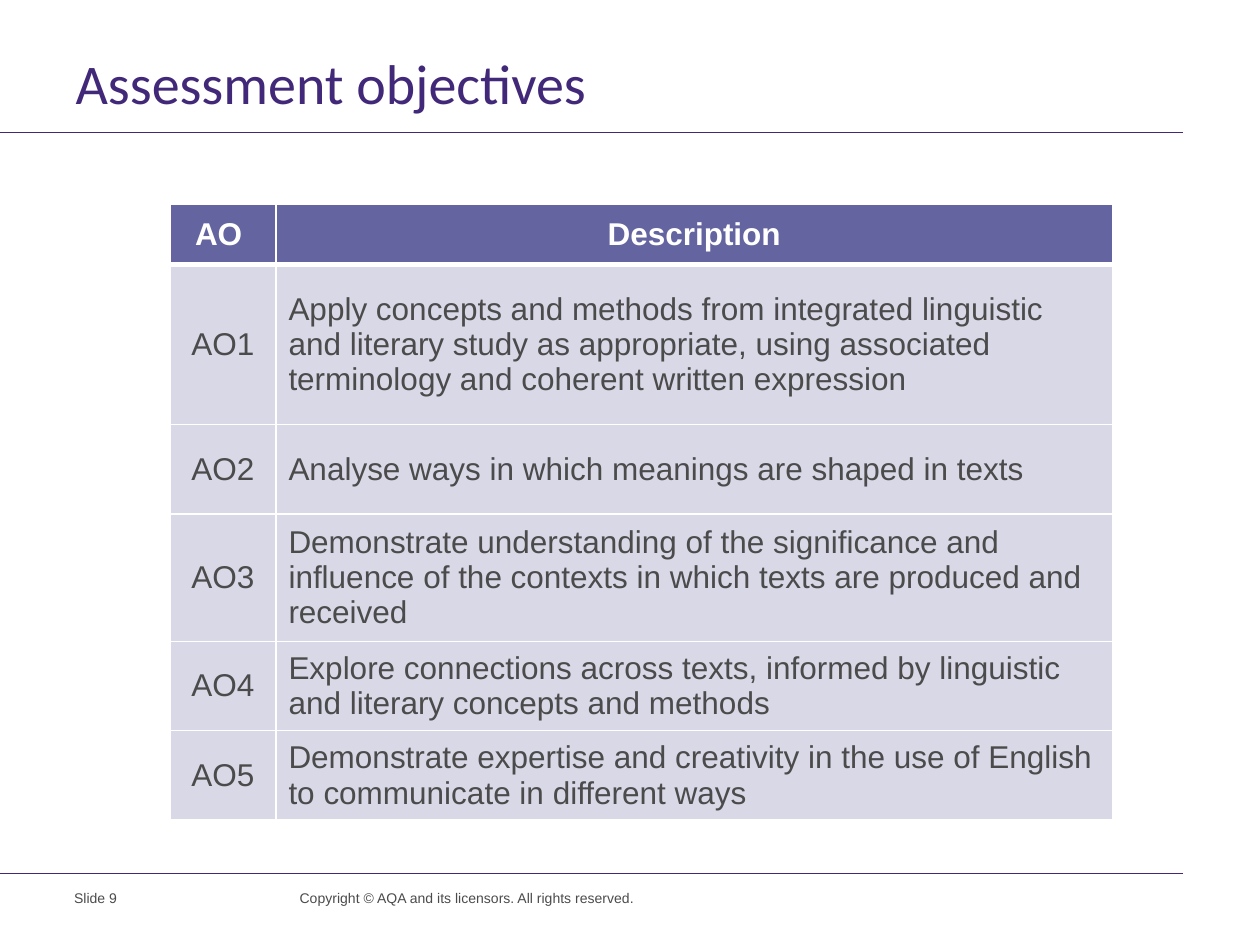
from lxml import etree
from pptx import Presentation
from pptx.dml.color import RGBColor
from pptx.enum.shapes import MSO_CONNECTOR
from pptx.enum.text import MSO_ANCHOR, MSO_AUTO_SIZE, PP_ALIGN
from pptx.oxml.ns import qn
from pptx.util import Inches, Pt

STRAIGHT = MSO_CONNECTOR.STRAIGHT
MIDDLE, BOTTOM = MSO_ANCHOR.MIDDLE, MSO_ANCHOR.BOTTOM
LEFT, CENTER = PP_ALIGN.LEFT, PP_ALIGN.CENTER
NO_AUTOFIT = MSO_AUTO_SIZE.NONE

PURPLE, LILAC, GREY, WHITE = "412878", "6464A0", "4B4B4B", "FFFFFF"
TITLE_ONLY = 5
RULE_END = 9.39

OBJECTIVES = [
    ("AO ", "Description"),
    ("AO1", "Apply concepts and methods from integrated linguistic and literary study "
            "as appropriate, using associated terminology and coherent written expression"),
    ("AO2", "Analyse ways in which meanings are shaped in texts"),
    ("AO3", "Demonstrate understanding of the significance and influence of the contexts "
            "in which texts are produced and received"),
    ("AO4", "Explore connections across texts, informed by linguistic and literary "
            "concepts and methods"),
    ("AO5", "Demonstrate expertise and creativity in the use of English to communicate "
            "in different ways"),
]
COLUMN_WIDTHS = [0.84, 6.64]
ROW_HEIGHTS = [0.48, 1.27, 0.71, 1.01, 0.71, 0.71]


def color(value):
    return RGBColor.from_string(value)


def add_span(para, text, size, font, ink, bold=False):
    span = para.add_run()
    span.text = text
    span.font.size = Pt(size)
    span.font.name = font
    span.font.bold = bold
    span.font.color.rgb = color(ink)


def add_rule(page, top):
    rule = page.shapes.add_connector(
        STRAIGHT, Inches(0), Inches(top), Inches(RULE_END), Inches(top))
    rule.line.color.rgb = color(PURPLE)
    rule.line.width = Pt(0.6)
    etree.SubElement(rule._element.spPr, qn("a:effectLst"))


def add_title(page, left, top, width, height):
    title = page.shapes.title
    title.left, title.top = Inches(left), Inches(top)
    title.width, title.height = Inches(width), Inches(height)
    frame = title.text_frame
    frame.auto_size = NO_AUTOFIT
    frame.vertical_anchor = BOTTOM
    frame.margin_top = frame.margin_bottom = 0
    para = frame.paragraphs[0]
    para.alignment = LEFT
    para.line_spacing = Pt(28)
    add_span(para, "Assessment objectives", 32, "Calibri", PURPLE)


def add_footer_text(page, text, left, top, width, height):
    box = page.shapes.add_textbox(Inches(left), Inches(top), Inches(width), Inches(height))
    box.text_frame.word_wrap = True
    add_span(box.text_frame.paragraphs[0], text, 8, "Arial", GREY)


def set_borders(cell, top_width, bottom_width):
    properties = cell._tc.get_or_add_tcPr()
    widths = {"a:lnL": 1, "a:lnR": 1, "a:lnT": top_width, "a:lnB": bottom_width}
    for tag, width in widths.items():
        line = etree.SubElement(properties, qn(tag), w=str(Pt(width)))
        fill = etree.SubElement(line, qn("a:solidFill"))
        etree.SubElement(fill, qn("a:srgbClr"), val=WHITE)


def set_fill(cell, percent):
    cell.fill.solid()
    cell.fill.fore_color.rgb = color(LILAC)
    if percent < 100:
        shade = cell._tc.tcPr.find(qn("a:solidFill")).find(qn("a:srgbClr"))
        etree.SubElement(shade, qn("a:alpha"), val=str(percent * 1000))


def add_objectives(page, left, top, width, height):
    table = page.shapes.add_table(
        len(ROW_HEIGHTS), len(COLUMN_WIDTHS),
        Inches(left), Inches(top), Inches(width), Inches(height)).table
    table.horz_banding = False
    for column, column_width in zip(table.columns, COLUMN_WIDTHS):
        column.width = Inches(column_width)
    for row, row_height in zip(table.rows, ROW_HEIGHTS):
        row.height = Inches(row_height)
    for r, texts in enumerate(OBJECTIVES):
        header = r == 0
        for c, text in enumerate(texts):
            cell = table.cell(r, c)
            set_borders(cell, 3 if r == 1 else 1, 3 if header else 1)
            set_fill(cell, 100 if header else 25)
            cell.vertical_anchor = MIDDLE
            para = cell.text_frame.paragraphs[0]
            para.alignment = CENTER if header or c == 0 else LEFT
            add_span(para, text, 18, "Arial", WHITE if header else GREY, header)


def main():
    deck = Presentation()
    deck.slide_width, deck.slide_height = Inches(10), Inches(7.5)
    page = deck.slides.add_slide(deck.slide_layouts[TITLE_ONLY])
    for top in (1.05, 6.93):
        add_rule(page, top)
    add_title(page, 0.5, 0.44, 9.5, 0.48)
    add_footer_text(page, "Slide 9", 0.49, 7.01, 1.56, 0.38)
    add_footer_text(page, "Copyright © AQA and its licensors. All rights reserved.",
                    2.28, 7.01, 2.93, 0.26)
    add_objectives(page, 1.35, 1.62, sum(COLUMN_WIDTHS), sum(ROW_HEIGHTS))
    deck.save("out.pptx")


if __name__ == "__main__":
    main()
